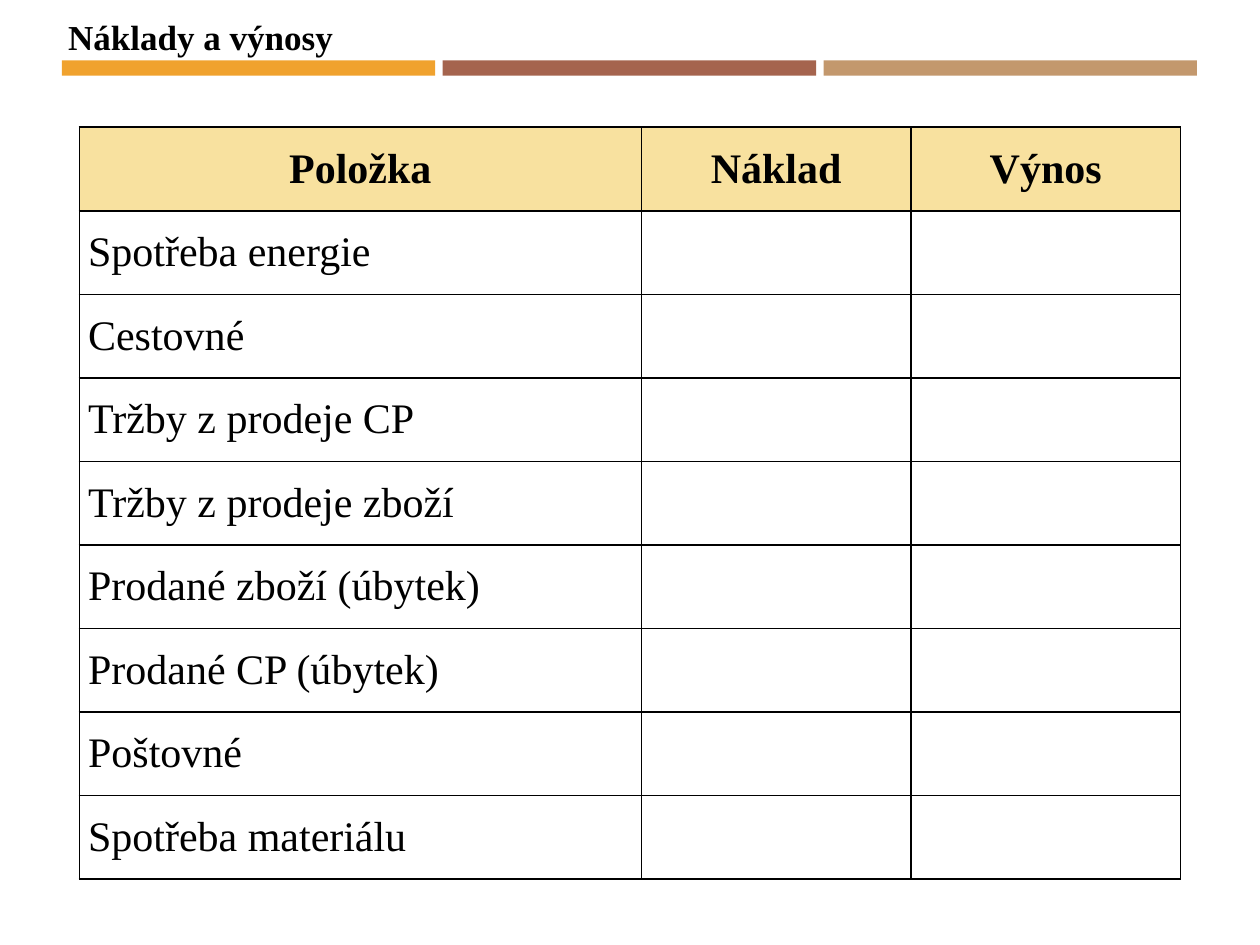
import dataclasses

import lxml.etree
import pptx
import pptx.dml.color
import pptx.enum.shapes
import pptx.enum.text
import pptx.oxml.ns
import pptx.util

Inches = pptx.util.Inches
Align = pptx.enum.text.PP_ALIGN
Anchor = pptx.enum.text.MSO_ANCHOR


@dataclasses.dataclass(frozen=True)
class Theme:
    font: str = "Times New Roman"
    text: str = "000000"
    header_fill: str = "F8E19F"
    bands: tuple = ("F0A22E", "A5644E", "C3986D")
    title_size: int = 20
    table_size: int = 24
    border_width: int = 1


THEME = Theme()
HEADINGS = ("Položka", "Náklad", "Výnos")
ITEMS = (
    "Spotřeba energie",
    "Cestovné",
    "Tržby z prodeje CP",
    "Tržby z prodeje zboží",
    "Prodané zboží (úbytek)",
    "Prodané CP (úbytek)",
    "Poštovné",
    "Spotřeba materiálu",
)


def rgb(value):
    return pptx.dml.color.RGBColor.from_string(value)


def apply_format(target, values):
    for name, value in values.items():
        setattr(target, name, value)


def write_text(frame, text, size, bold, alignment):
    paragraph = frame.paragraphs[0]
    paragraph.alignment = alignment
    run = paragraph.add_run()
    run.text = text
    apply_format(run.font, {"name": THEME.font, "size": pptx.util.Pt(size), "bold": bold})
    run.font.color.rgb = rgb(THEME.text)


def add_heading(slide, left, top, width, height):
    heading = slide.shapes.title
    apply_format(heading, {"left": left, "top": top, "width": width, "height": height})
    apply_format(heading.text_frame, {
        "word_wrap": False,
        "auto_size": pptx.enum.text.MSO_AUTO_SIZE.SHAPE_TO_FIT_TEXT,
        "vertical_anchor": Anchor.TOP,
    })
    write_text(heading.text_frame, "Náklady a výnosy", THEME.title_size, True, Align.LEFT)


def add_bands(slide, left, top, width, height):
    gap = Inches(0.06)
    count = len(THEME.bands)
    band_width = (width - gap * (count - 1)) // count
    for index, color in enumerate(THEME.bands):
        band = slide.shapes.add_shape(
            pptx.enum.shapes.MSO_SHAPE.RECTANGLE,
            left + index * (band_width + gap), top, band_width, height)
        band.shadow.inherit = False
        band.fill.solid()
        band.fill.fore_color.rgb = rgb(color)
        band.line.fill.background()


def add_borders(cell):
    properties = cell._tc.get_or_add_tcPr()
    qn = pptx.oxml.ns.qn
    for position, side in enumerate(("a:lnL", "a:lnR", "a:lnT", "a:lnB")):
        border = lxml.etree.Element(qn(side), w=str(pptx.util.Pt(THEME.border_width)))
        fill = lxml.etree.SubElement(border, qn("a:solidFill"))
        lxml.etree.SubElement(fill, qn("a:srgbClr"), val=THEME.text)
        properties.insert(position, border)


def add_cost_table(slide, left, top, width, height):
    rows = [HEADINGS] + [(item, "", "") for item in ITEMS]
    table = slide.shapes.add_table(
        len(rows), len(HEADINGS), left, top, width, height).table
    table.horz_banding = False
    amount_width = Inches(2.14)
    for column, column_width in zip(
            table.columns, (width - 2 * amount_width, amount_width, amount_width)):
        column.width = column_width
    for row_index, texts in enumerate(rows):
        is_header = row_index == 0
        for column_index, text in enumerate(texts):
            cell = table.cell(row_index, column_index)
            apply_format(cell, {
                "margin_left": Inches(0.07), "margin_right": Inches(0.07),
                "margin_top": 0, "margin_bottom": 0,
                "vertical_anchor": Anchor.MIDDLE,
            })
            if is_header:
                cell.fill.solid()
                cell.fill.fore_color.rgb = rgb(THEME.header_fill)
            else:
                cell.fill.background()
            add_borders(cell)
            if text:
                write_text(cell.text_frame, text, THEME.table_size, is_header,
                           Align.CENTER if is_header else Align.JUSTIFY)


def main():
    presentation = pptx.Presentation()
    apply_format(presentation, {"slide_width": Inches(10), "slide_height": Inches(7.5)})
    slide = presentation.slides.add_slide(presentation.slide_layouts.get_by_name("Title Only"))
    add_bands(slide, Inches(0.49), Inches(0.48), Inches(9.01), Inches(0.12))
    add_heading(slide, Inches(0.44), Inches(0.07), Inches(2.32), Inches(0.44))
    add_cost_table(slide, Inches(0.63), Inches(1.01), Inches(8.74), Inches(5.97))
    presentation.save("out.pptx")


if __name__ == "__main__":
    main()
